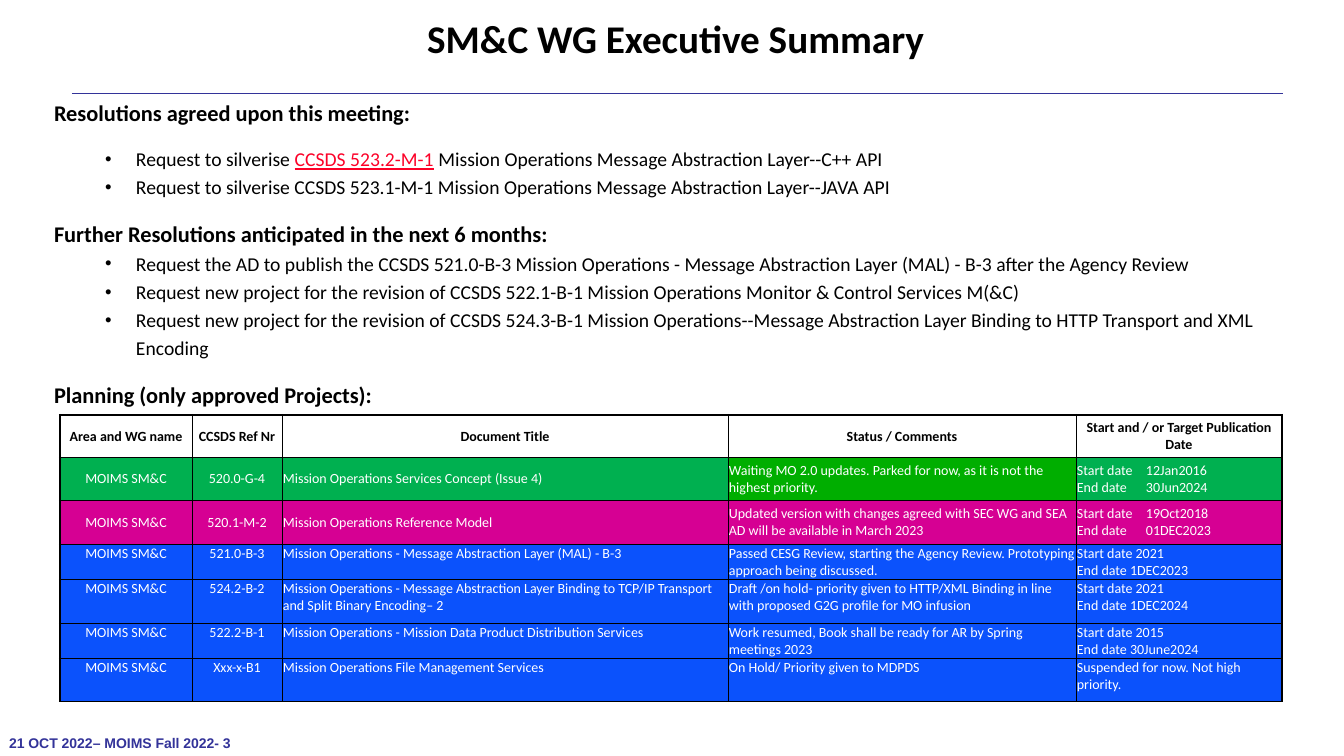
"""Build the SM&C working group executive summary slide."""
import pptx
import pptx.dml.color
import pptx.enum.shapes
import pptx.enum.text
import pptx.oxml
import pptx.oxml.ns
import pptx.util

TITLE = "SM&C WG Executive Summary"
FOOTER = "21 OCT 2022– MOIMS Fall 2022- 3"
SECTIONS = [
    ("Resolutions agreed upon this meeting:", [
        [("Request to silverise ", "plain"), ("CCSDS 523.2-M-1", "marked"),
         (" Mission Operations Message Abstraction Layer--C++ API", "plain")],
        [("Request to silverise CCSDS 523.1-M-1 Mission Operations Message Abstraction Layer--JAVA API", "plain")],
    ]),
    ("Further Resolutions anticipated in the next 6 months:", [
        [("Request the AD to publish the CCSDS 521.0-B-3 Mission Operations - Message Abstraction Layer (MAL)"
          " - B-3 after the Agency Review", "plain")],
        [("Request new project for the revision of CCSDS 522.1-B-1 Mission Operations Monitor & Control"
          " Services M(&C)", "plain")],
        [("Request new project for the revision of CCSDS 524.3-B-1 Mission Operations--Message Abstraction"
          " Layer Binding to HTTP Transport and XML Encoding", "plain")],
    ]),
    ("Planning (only approved Projects):", []),
]
HEADER = ("Area and WG name", "CCSDS Ref Nr", "Document Title", "Status / Comments",
          "Start and / or Target Publication Date")
AREA = "MOIMS SM&C"
PROJECTS = [
    ("green", "520.0-G-4", "Mission Operations Services Concept (Issue 4)",
     "Waiting MO 2.0 updates. Parked for now, as it is not the highest priority.",
     "Start date\t12Jan2016\nEnd date\t30Jun2024"),
    ("pink", "520.1-M-2", "Mission Operations Reference Model",
     "Updated version with changes agreed with SEC WG and SEA AD will be available in March 2023",
     "Start date\t19Oct2018\nEnd date\t01DEC2023"),
    ("blue", "521.0-B-3", "Mission Operations - Message Abstraction Layer (MAL) - B-3",
     "Passed CESG Review, starting the Agency Review. Prototyping approach being discussed.",
     "Start date 2021\nEnd date 1DEC2023"),
    ("blue", "524.2-B-2",
     "Mission Operations - Message Abstraction Layer Binding to TCP/IP Transport and Split Binary Encoding– 2",
     "Draft /on hold- priority given to HTTP/XML Binding in line with proposed G2G profile for MO infusion",
     "Start date 2021\nEnd date 1DEC2024"),
    ("blue", "522.2-B-1", "Mission Operations - Mission Data Product Distribution Services",
     "Work resumed, Book shall be ready for AR by Spring meetings 2023",
     "Start date 2015\nEnd date 30June2024"),
    ("blue", "Xxx-x-B1", "Mission Operations File Management Services",
     "On Hold/ Priority given to MDPDS", "Suspended for now. Not high priority."),
]
COLUMN_WIDTHS = (132, 90, 446, 348, 206)
ROW_HEIGHTS = (42, 43, 44, 35, 44, 35, 44)

THEME = {
    "font": "Calibri", "footer_font": "Arial",
    "title": 28, "heading": 16, "body": 14, "small": 10, "gap": 11.5,
    "black": "000000", "white": "FFFFFF", "red": "FC0128", "navy": "333399",
    "green": "00B050", "status_green": "00AE00", "pink": "D60093", "blue": "0B52FC",
    "rule": 0.13, "thin": 0.5, "thick": 2,
}
CENTER = pptx.enum.text.PP_ALIGN.CENTER
LEFT = pptx.enum.text.PP_ALIGN.LEFT
MIDDLE = pptx.enum.text.MSO_ANCHOR.MIDDLE
TOP = pptx.enum.text.MSO_ANCHOR.TOP


def px(length):
    return pptx.util.Emu(round(length * 914400 / 100.8))


def color(name):
    return pptx.dml.color.RGBColor.from_string(THEME[name])


def element(tag, content="", **attributes):
    values = "".join(f' {name}="{value}"' for name, value in attributes.items())
    return pptx.oxml.parse_xml(f'<a:{tag} {pptx.oxml.ns.nsdecls("a")}{values}>{content}</a:{tag}>')


def add_run(paragraph, text, size, ink="black", bold=False, font="font", underline=False):
    run = paragraph.add_run()
    run.text = text
    run.font.name = THEME[font]
    run.font.size = pptx.util.Pt(THEME[size])
    run.font.bold = bold
    run.font.underline = underline
    run.font.color.rgb = color(ink)


def add_text_box(slide, box, inset_x, inset_y, wrap=True):
    frame = slide.shapes.add_textbox(*map(px, box)).text_frame
    frame.word_wrap = wrap
    frame.margin_left = frame.margin_right = px(inset_x)
    frame.margin_top = frame.margin_bottom = px(inset_y)
    return frame


def add_title(slide):
    paragraph = add_text_box(slide, (265, 14, 779, 58), 6, 6).paragraphs[0]
    paragraph.alignment = CENTER
    paragraph.line_spacing = 0.9
    paragraph._p.get_or_add_pPr().set("marL", str(px(42)))
    add_run(paragraph, TITLE, "title", bold=True)


def add_rule(slide):
    rule = slide.shapes.add_connector(pptx.enum.shapes.MSO_CONNECTOR.STRAIGHT, px(72), px(93), px(1283), px(93))
    rule.line.color.rgb = color("navy")
    rule.line.width = pptx.util.Pt(THEME["rule"])
    rule._element.spPr.append(element("effectLst"))


def add_bullet(paragraph):
    properties = paragraph._p.get_or_add_pPr()
    properties.set("marL", str(px(82)))
    properties.set("indent", str(px(-31)))
    properties.append(element("buClr", f'<a:srgbClr val="{THEME["black"]}"/>'))
    properties.append(element("buSzPct", val=95000))
    properties.append(element("buFont", typeface="Arial"))
    properties.append(element("buChar", char="•"))


def add_sections(slide):
    frame = add_text_box(slide, (48, 88, 1246, 581), 6, 6)
    gap = pptx.util.Pt(THEME["gap"])
    for section, (heading, bullets) in enumerate(SECTIONS):
        paragraph = frame.add_paragraph() if section else frame.paragraphs[0]
        paragraph.line_spacing = 1.2
        if section:
            paragraph.space_before = gap
        add_run(paragraph, heading, "heading", bold=True)
        for index, runs in enumerate(bullets):
            paragraph = frame.add_paragraph()
            add_bullet(paragraph)
            paragraph.line_spacing = 1.2
            if section == index == 0:
                paragraph.space_before = gap
            for text, kind in runs:
                marked = kind == "marked"
                add_run(paragraph, text, "body", "red" if marked else "black", underline=marked)


def set_borders(cell, thick_sides):
    properties = cell._tc.get_or_add_tcPr()
    fill = f'<a:solidFill><a:srgbClr val="{THEME["black"]}"/></a:solidFill>'
    for index, side in enumerate("LRTB"):
        width = THEME["thick" if side in thick_sides else "thin"]
        properties.insert(index, element(f"ln{side}", fill, w=pptx.util.Pt(width)))


def fill_cell(cell, text, fill, alignment, anchor, ink, bold):
    cell.margin_left = cell.margin_right = cell.margin_top = px(1)
    cell.margin_bottom = 0
    cell.vertical_anchor = anchor
    if fill:
        cell.fill.solid()
        cell.fill.fore_color.rgb = color(fill)
    else:
        cell.fill.background()
    for index, line in enumerate(text.split("\n")):
        paragraph = cell.text_frame.add_paragraph() if index else cell.text_frame.paragraphs[0]
        if "\t" in line:
            stop = f'<a:tab pos="{px(69)}" algn="l"/>'
            paragraph._p.get_or_add_pPr().append(element("tabLst", stop))
        paragraph.alignment = alignment
        add_run(paragraph, line, "small", ink, bold)


def add_planning_table(slide):
    rows, columns = len(ROW_HEIGHTS), len(COLUMN_WIDTHS)
    box = (60, 415, sum(COLUMN_WIDTHS), sum(ROW_HEIGHTS))
    table = slide.shapes.add_table(rows, columns, *map(px, box)).table
    table.first_row = table.horz_banding = False
    for column, width in enumerate(COLUMN_WIDTHS):
        table.columns[column].width = px(width)
    records = [(None, *HEADER)] + [(fill, AREA, *rest) for fill, *rest in PROJECTS]
    for row, (row_fill, *texts) in enumerate(records):
        table.rows[row].height = px(ROW_HEIGHTS[row])
        heading = row == 0
        anchor = TOP if row_fill == "blue" else MIDDLE
        for column, text in enumerate(texts):
            cell = table.cell(row, column)
            fill = "status_green" if row_fill == "green" and column == 3 else row_fill
            alignment = CENTER if heading or column < 2 else LEFT
            fill_cell(cell, text, fill, alignment, anchor, "black" if heading else "white", heading)
            edges = (("L", column == 0), ("R", column == columns - 1), ("T", heading))
            set_borders(cell, [side for side, outer in edges if outer])


def main():
    presentation = pptx.Presentation()
    presentation.slide_width, presentation.slide_height = px(1344), px(756)
    slide = presentation.slides.add_slide(presentation.slide_layouts[6])
    add_rule(slide)
    footer = add_text_box(slide, (0, 730, 251, 26), 9, 4, wrap=False)
    add_run(footer.paragraphs[0], FOOTER, "small", "navy", True, "footer_font")
    add_sections(slide)
    add_title(slide)
    add_planning_table(slide)
    presentation.save("out.pptx")


if __name__ == "__main__":
    main()
